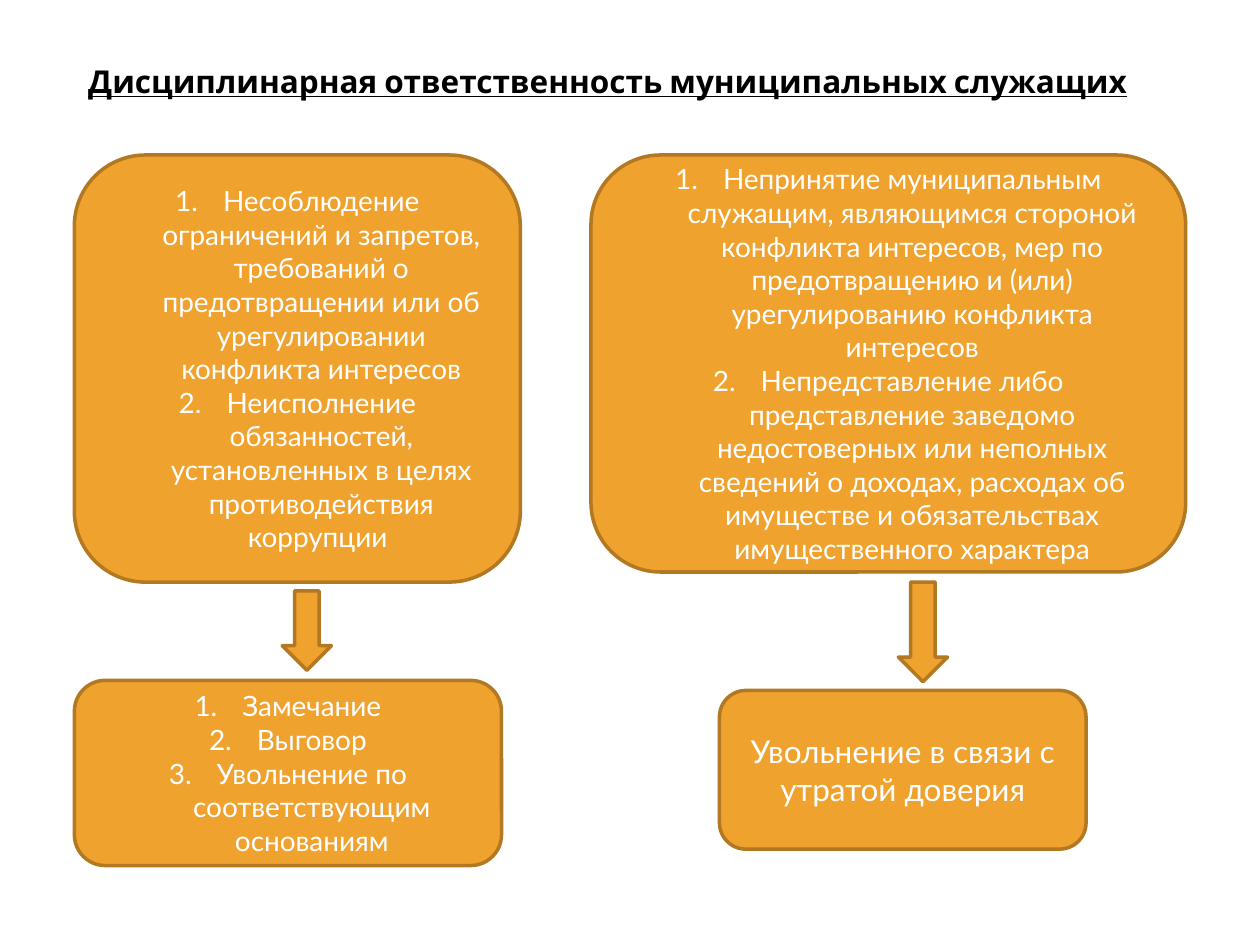
import pptx
import pptx.util
import pptx.dml.color
import lxml.etree
from pptx.enum.shapes import MSO_SHAPE
from pptx.enum.text import PP_ALIGN, MSO_ANCHOR
from pptx.oxml.ns import qn

Inches, Pt = pptx.util.Inches, pptx.util.Pt

# Content
TITLE = "Дисциплинарная ответственность муниципальных служащих"

# Boxes: place (left, top, width, height), text size, numbered or not, lines
BOXES = [
    ((0.59, 1.23, 3.54, 3.39), 16, True, [
        "Несоблюдение ограничений и запретов, требований о предотвращении "
        "или об урегулировании конфликта интересов",
        "Неисполнение обязанностей, установленных в целях "
        "противодействия коррупции ",
    ]),
    ((0.59, 5.4, 3.39, 1.47), 16, True, [
        "Замечание",
        "Выговор",
        "Увольнение по соответствующим основаниям",
    ]),
    ((4.69, 1.23, 4.72, 3.31), 16, True, [
        "Непринятие муниципальным служащим, являющимся стороной конфликта "
        "интересов, мер по предотвращению и (или) урегулированию конфликта "
        "интересов",
        "Непредставление либо представление заведомо недостоверных или "
        "неполных сведений о доходах, расходах об имуществе и "
        "обязательствах имущественного характера",
    ]),
    ((5.71, 5.48, 2.91, 1.26), 18, False, [
        "Увольнение в связи с утратой доверия",
    ]),
]
ARROWS = [(2.24, 4.69, 0.39, 0.63), (7.13, 4.62, 0.39, 0.79)]


def color(code):
    return pptx.dml.color.RGBColor.from_string(code)


def style(par, face, size, code):
    par.alignment = PP_ALIGN.CENTER
    par.font.name = face
    par.font.size = Pt(size)
    par.font.color.rgb = color(code)


def number(par):
    props = par._p.get_or_add_pPr()
    props.set("marL", str(Inches(0.38)))
    props.set("indent", str(-Inches(0.38)))
    mark = lxml.etree.Element(qn("a:buAutoNum"), type="arabicPeriod")
    # The bullet must stand before the default run properties
    props.insert(0, mark)


def draw(slide, kind, place):
    shape = slide.shapes.add_shape(kind, *map(Inches, place))
    shape.shadow.inherit = False
    shape.fill.solid()
    shape.fill.fore_color.rgb = color("F0A22E")
    shape.line.color.rgb = color("B27822")
    shape.line.width = Pt(2)
    return shape


def main():
    deck = pptx.Presentation()
    deck.slide_width, deck.slide_height = Inches(10), Inches(7.5)
    slide = deck.slides.add_slide(deck.slide_layouts[5])

    # Title
    title = slide.shapes.title
    title.left, title.top = Inches(0.53), Inches(0.44)
    title.width, title.height = Inches(8.59), Inches(0.4)
    frame = title.text_frame
    frame.text = TITLE
    frame.word_wrap = False
    frame.vertical_anchor = MSO_ANCHOR.TOP
    head = frame.paragraphs[0]
    style(head, "Cabin", 18, "000000")
    head.font.bold = head.font.underline = True

    # Boxes
    for place, size, listed, lines in BOXES:
        frame = draw(slide, MSO_SHAPE.ROUNDED_RECTANGLE, place).text_frame
        frame.word_wrap = True
        frame.vertical_anchor = MSO_ANCHOR.MIDDLE
        frame.text = "\n".join(lines)
        for par in frame.paragraphs:
            style(par, "Lato", size, "FFFFFF")
            if listed:
                number(par)

    # Arrows
    for place in ARROWS:
        draw(slide, MSO_SHAPE.DOWN_ARROW, place)

    deck.save("out.pptx")


if __name__ == "__main__":
    main()
